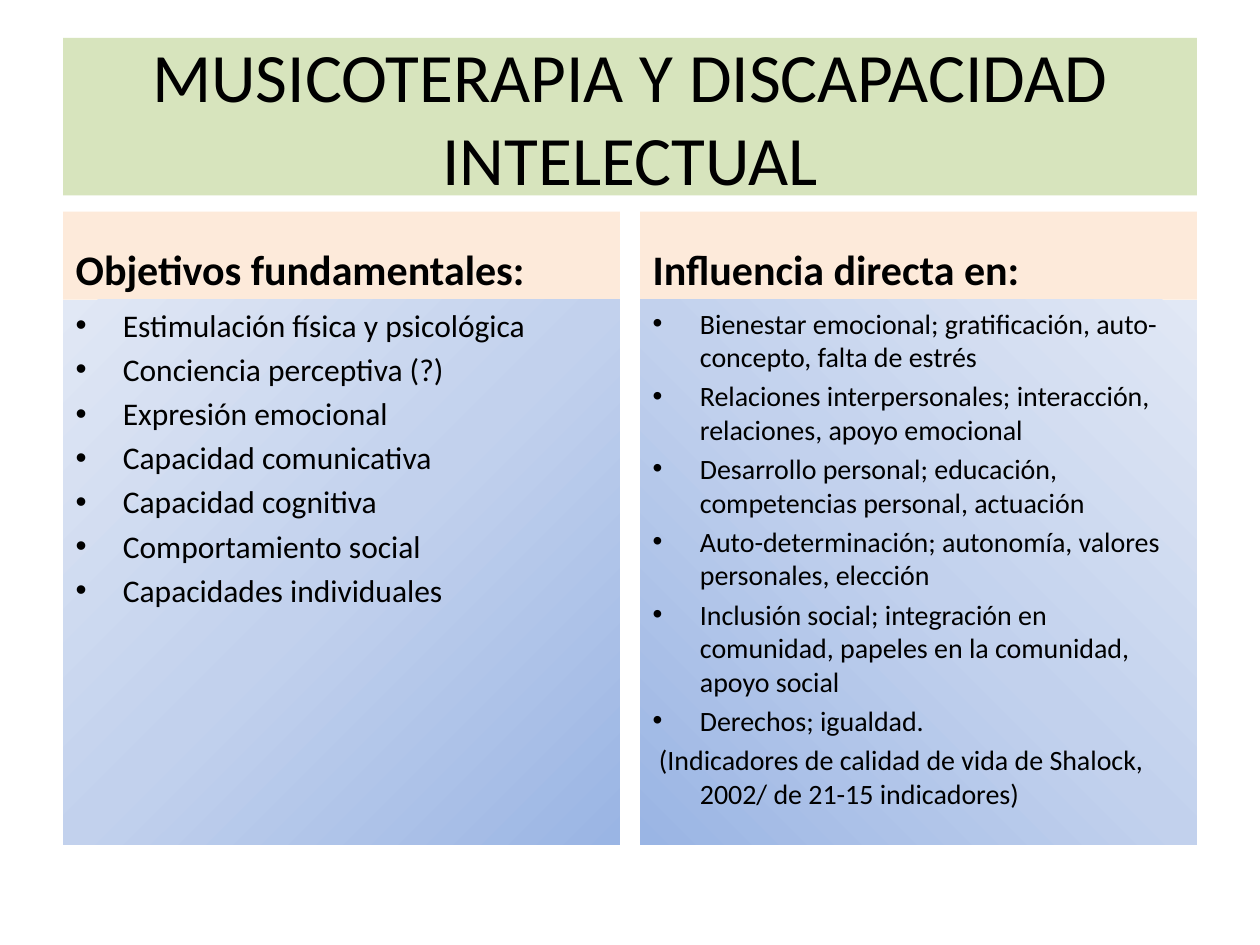
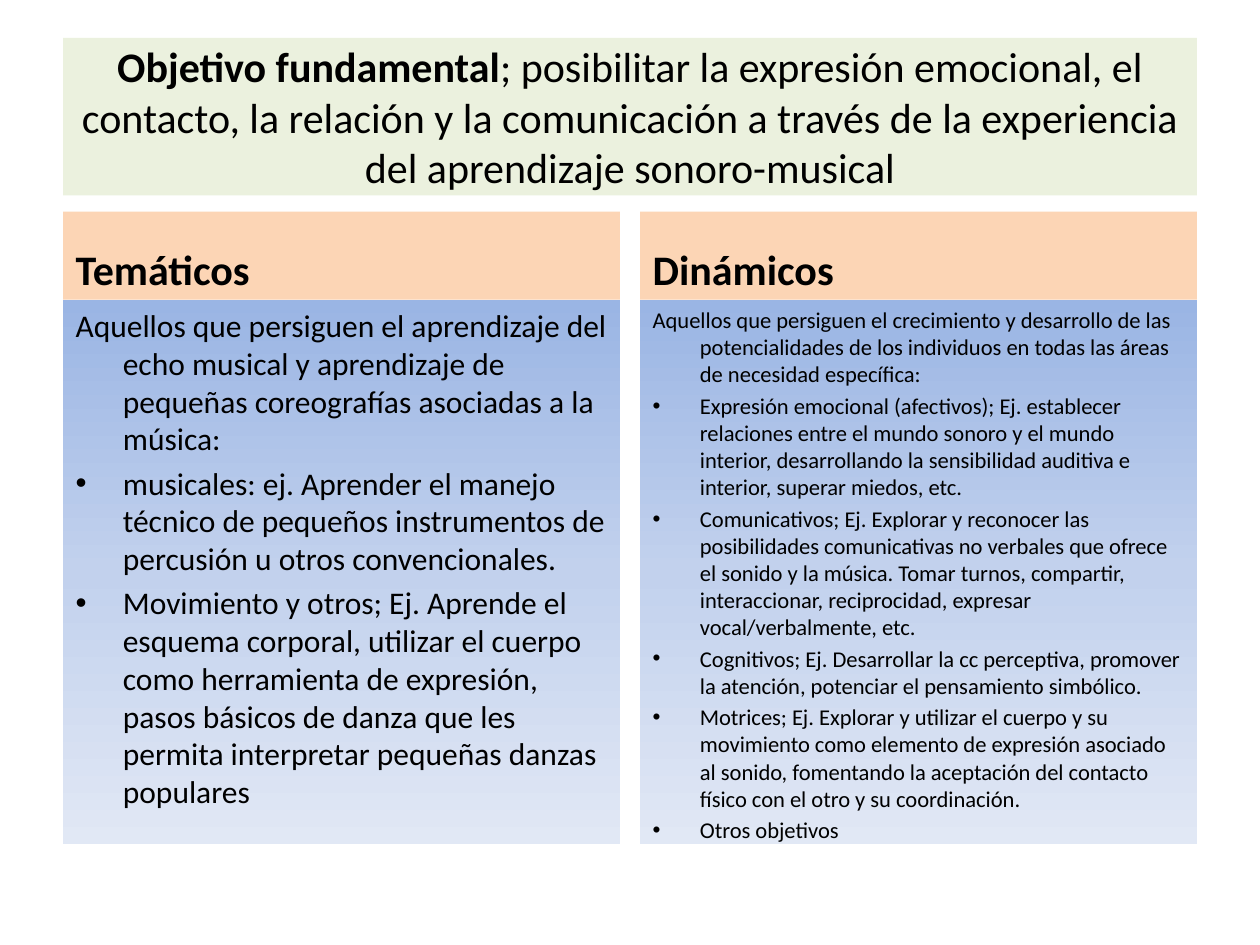
from lxml.etree import SubElement
from pptx import Presentation
from pptx.dml.color import RGBColor
from pptx.enum.text import MSO_ANCHOR, MSO_AUTO_SIZE, PP_ALIGN
from pptx.oxml import parse_xml
from pptx.oxml.ns import nsdecls, qn
from pptx.util import Pt

COMPARISON = 4
TITLE_BOX = (36, 21.6, 648, 90)
COLUMNS_BOX = (36, 120.9, 648, 361.5)
COLUMN_GAP = 11.5
HEADING_HEIGHT = 50.4
INDENT = 27
STOPS = {0: "9AB5E4", 50: "C2D1ED", 100: "E1E8F5"}
FROM_BOTTOM_RIGHT = '<a:path path="circle"><a:fillToRect l="100000" t="100000"/></a:path>'
FROM_BOTTOM_LEFT = '<a:path path="circle"><a:fillToRect t="100000" r="100000"/></a:path>'
DOWNWARD = '<a:lin ang="5400000" scaled="0"/>'

SLIDES = [
    {
        "title": [("MUSICOTERAPIA Y DISCAPACIDAD INTELECTUAL", False)],
        "title_size": 39.6,
        "title_fill": "D7E4BD",
        "heading_fill": "FDEADA",
        "columns": [
            {
                "heading": "Objetivos fundamentales:",
                "size": 18,
                "direction": FROM_BOTTOM_RIGHT,
                "plain": None,
                "items": [
                    "Estimulación física y psicológica",
                    "Conciencia perceptiva (?)",
                    "Expresión emocional",
                    "Capacidad comunicativa",
                    "Capacidad cognitiva",
                    "Comportamiento social",
                    "Capacidades individuales",
                ],
            },
            {
                "heading": "Influencia directa en:",
                "size": 16,
                "direction": FROM_BOTTOM_LEFT,
                "plain": 6,
                "items": [
                    "Bienestar emocional; gratificación, auto-concepto, falta de estrés",
                    "Relaciones interpersonales; interacción, relaciones, apoyo emocional",
                    "Desarrollo personal; educación, competencias personal, actuación",
                    "Auto-determinación; autonomía, valores personales, elección",
                    "Inclusión social; integración en comunidad, papeles en la comunidad, "
                    "apoyo social",
                    "Derechos; igualdad.",
                    " (Indicadores de calidad de vida de Shalock, 2002/ de 21-15 indicadores)",
                ],
            },
        ],
    },
    {
        "title": [
            ("Objetivo fundamental", True),
            ("; posibilitar la expresión emocional, el contacto, la relación y la "
             "comunicación a través de la experiencia del aprendizaje sonoro-musical", False),
        ],
        "title_size": 24,
        "title_fill": "EBF1DE",
        "heading_fill": "FCD5B5",
        "columns": [
            {
                "heading": "Temáticos",
                "size": 18,
                "direction": DOWNWARD,
                "plain": 0,
                "items": [
                    "Aquellos que persiguen el aprendizaje del echo musical y aprendizaje "
                    "de pequeñas coreografías asociadas a la música:",
                    "musicales: ej. Aprender el manejo técnico de pequeños instrumentos "
                    "de percusión u otros convencionales.",
                    "Movimiento y otros; Ej. Aprende el esquema corporal, utilizar el "
                    "cuerpo como herramienta de expresión, pasos básicos de danza que les "
                    "permita interpretar pequeñas danzas populares",
                ],
            },
            {
                "heading": "Dinámicos",
                "size": 12.9,
                "direction": DOWNWARD,
                "plain": 0,
                "items": [
                    "Aquellos que persiguen el crecimiento y desarrollo de las "
                    "potencialidades de los individuos en todas las áreas de necesidad "
                    "específica:",
                    "Expresión emocional (afectivos); Ej. establecer relaciones entre el "
                    "mundo sonoro y el mundo interior, desarrollando la sensibilidad "
                    "auditiva e interior, superar miedos, etc.",
                    "Comunicativos; Ej. Explorar y reconocer las posibilidades "
                    "comunicativas no verbales que ofrece el sonido y la música. Tomar "
                    "turnos, compartir, interaccionar, reciprocidad, expresar "
                    "vocal/verbalmente, etc.",
                    "Cognitivos; Ej. Desarrollar la cc perceptiva, promover la atención, "
                    "potenciar el pensamiento simbólico.",
                    "Motrices; Ej. Explorar y utilizar el cuerpo y su movimiento como "
                    "elemento de expresión asociado al sonido, fomentando la aceptación "
                    "del contacto físico con el otro y su coordinación.",
                    "Otros objetivos",
                ],
            },
        ],
    },
]


def color(value):
    return RGBColor.from_string(value)


def set_attrs(obj, values):
    for name, value in values.items():
        setattr(obj, name, value)


def place(sp, box, anchor):
    set_attrs(sp, dict(zip(("left", "top", "width", "height"), map(Pt, box))))
    set_attrs(sp.text_frame, {
        "auto_size": MSO_AUTO_SIZE.NONE,
        "word_wrap": True,
        "vertical_anchor": anchor,
    })
    return sp.text_frame


def fill_solid(sp, value):
    sp.fill.solid()
    sp.fill.fore_color.rgb = color(value)


def fill_gradient(sp, direction):
    stops = "".join(
        f'<a:gs pos="{pos * 1000}"><a:srgbClr val="{value}"/></a:gs>'
        for pos, value in STOPS.items()
    )
    sp._element.spPr.append(parse_xml(
        f'<a:gradFill {nsdecls("a")} rotWithShape="1">'
        f"<a:gsLst>{stops}</a:gsLst>{direction}</a:gradFill>"
    ))


def add_run(p, text, size, bold=False):
    r = p.add_run()
    r.text = text
    set_attrs(r.font, {"name": "Calibri", "size": Pt(size), "bold": bold})
    r.font.color.rgb = color("000000")


def set_bullet(p, bulleted):
    pPr = p._p.get_or_add_pPr()
    pPr.set("marL", str(Pt(INDENT)))
    pPr.set("indent", str(Pt(-INDENT)))
    if bulleted:
        SubElement(pPr, qn("a:buFont")).set("typeface", "Arial")
        SubElement(pPr, qn("a:buChar")).set("char", "•")
    else:
        SubElement(pPr, qn("a:buNone"))


def add_title(sp, box, content):
    p = place(sp, box, MSO_ANCHOR.MIDDLE).paragraphs[0]
    fill_solid(sp, content["title_fill"])
    p.alignment = PP_ALIGN.CENTER
    for text, bold in content["title"]:
        add_run(p, text, content["title_size"], bold)


def add_column(heading, body, box, column, heading_fill):
    left, top, width, height = box
    tf = place(heading, (left, top, width, HEADING_HEIGHT), MSO_ANCHOR.BOTTOM)
    fill_solid(heading, heading_fill)
    add_run(tf.paragraphs[0], column["heading"], 24, True)

    body_box = (left, top + HEADING_HEIGHT, width, height - HEADING_HEIGHT)
    tf = place(body, body_box, MSO_ANCHOR.TOP)
    fill_gradient(body, column["direction"])
    for i, text in enumerate(column["items"]):
        p = tf.add_paragraph() if i else tf.paragraphs[0]
        set_bullet(p, i != column["plain"])
        add_run(p, text, column["size"])


def add_comparison(prs, content):
    s = prs.slides.add_slide(prs.slide_layouts[COMPARISON])
    title, *parts = s.placeholders
    add_title(title, TITLE_BOX, content)
    left, top, total, height = COLUMNS_BOX
    width = (total - COLUMN_GAP) / 2
    for i, column in enumerate(content["columns"]):
        heading, body = parts[2 * i:2 * i + 2]
        box = (left + i * (width + COLUMN_GAP), top, width, height)
        add_column(heading, body, box, column, content["heading_fill"])


def main():
    prs = Presentation()
    set_attrs(prs, {"slide_width": Pt(720), "slide_height": Pt(540)})
    for content in SLIDES:
        add_comparison(prs, content)
    prs.save("out.pptx")


if __name__ == "__main__":
    main()
